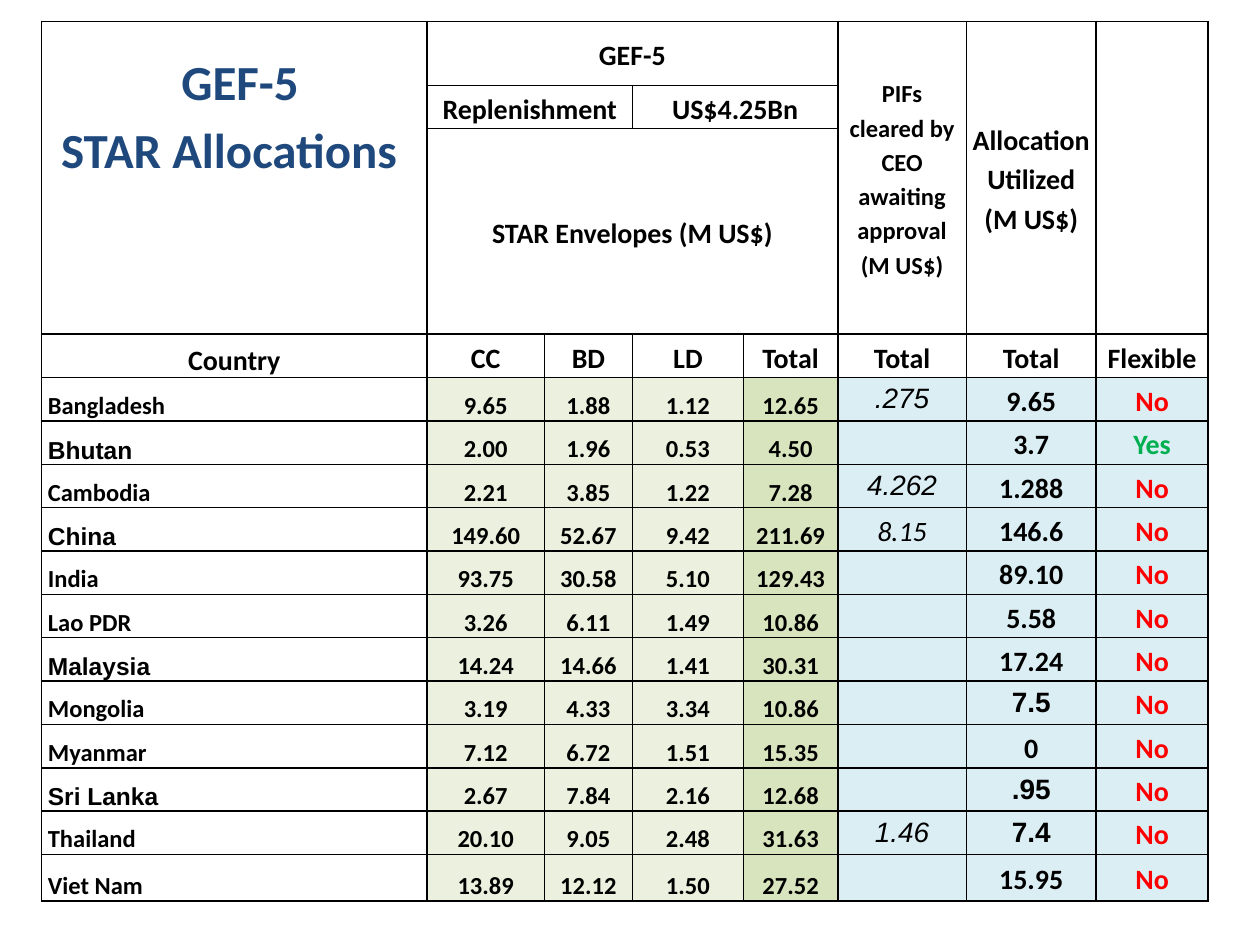
from dataclasses import dataclass, replace
from lxml.etree import SubElement
from pptx import Presentation
from pptx.dml.color import RGBColor as Rgb
from pptx.enum.text import MSO_ANCHOR as Anchor, PP_ALIGN as Align
from pptx.oxml.ns import qn
from pptx.util import Inches, Pt

WHITE, MINT, LIME, SKY = "FFFFFF", "EBF1DE", "D7E4BD", "DBEEF4"
BLACK, RED, GREEN, NAVY = "000000", "FF0000", "00B050", "1F497D"


@dataclass(frozen=True)
class Look:
    size: int = 16
    face: str = "Calibri"
    ink: str = BLACK
    bold: bool = True
    slant: bool = False
    align: Align = Align.CENTER
    anchor: Anchor = Anchor.MIDDLE


@dataclass(frozen=True)
class Head:
    row: int
    col: int
    down: int
    wide: int
    text: str
    look: Look = Look()


@dataclass(frozen=True)
class Land:
    name: str
    star: tuple[str, ...]  # CC, BD, LD, total
    pif: str
    used: str
    flex: str = "No"


COLS = [3.06, 0.93, 0.7, 0.88, 0.75, 1.02, 1.03, 0.89]
FILLS = [WHITE, MINT, MINT, MINT, LIME, SKY, SKY, SKY]
NAMES = ["Country", "CC", "BD", "LD", "Total", "Total", "Total", "Flexible"]
TOP = 4  # header rows

HEADS = [
    Head(0, 0, 3, 1, ""),
    Head(0, 1, 1, 4, "GEF-5"),
    Head(0, 5, 3, 1, "PIFs cleared by CEO awaiting approval (M US$)", Look(14)),
    Head(0, 6, 3, 1, "Allocation Utilized\n(M US$)"),
    Head(0, 7, 3, 1, ""),
    Head(1, 1, 1, 2, "Replenishment"),
    Head(1, 3, 1, 2, "US$4.25Bn"),
    Head(2, 1, 1, 4, "STAR Envelopes (M US$)"),
]

LANDS = [
    Land("Bangladesh", ("9.65", "1.88", "1.12", "12.65"), ".275", "9.65"),
    Land("Bhutan", ("2.00", "1.96", "0.53", "4.50"), "", "3.7", "Yes"),
    Land("Cambodia", ("2.21", "3.85", "1.22", "7.28"), "4.262", "1.288"),
    Land("China", ("149.60", "52.67", "9.42", "211.69"), "8.15", "146.6"),
    Land("India", ("93.75", "30.58", "5.10", "129.43"), "", "89.10"),
    Land("Lao PDR", ("3.26", "6.11", "1.49", "10.86"), "", "5.58"),
    Land("Malaysia", ("14.24", "14.66", "1.41", "30.31"), "", "17.24"),
    Land("Mongolia", ("3.19", "4.33", "3.34", "10.86"), "", "7.5"),
    Land("Myanmar", ("7.12", "6.72", "1.51", "15.35"), "", "0"),
    Land("Sri Lanka", ("2.67", "7.84", "2.16", "12.68"), "", ".95"),
    Land("Thailand", ("20.10", "9.05", "2.48", "31.63"), "1.46", "7.4"),
    Land("Viet Nam", ("13.89", "12.12", "1.50", "27.52"), "", "15.95"),
]
ARIAL = {"Bhutan", "China", "Malaysia", "Sri Lanka",
         ".275", "4.262", "1.46", "7.5", ".95", "7.4"}


def tint(code: str) -> Rgb:
    return Rgb.from_string(code)


def style(frame, look: Look, gap: float) -> None:
    for para in frame.paragraphs:
        para.alignment, para.line_spacing = look.align, gap
        font = para.font
        font.size, font.name = Pt(look.size), look.face
        font.bold, font.italic = look.bold, look.slant
        font.color.rgb = tint(look.ink)


def rule(cell) -> None:
    """Draw a thin black border on all four sides."""
    props = cell._tc.get_or_add_tcPr()
    for side in ("a:lnL", "a:lnR", "a:lnT", "a:lnB"):
        line = SubElement(props, qn(side), w=str(Pt(1)))
        fill = SubElement(line, qn("a:solidFill"))
        SubElement(fill, qn("a:srgbClr"), val=BLACK)


def paint(cell, fill: str) -> None:
    rule(cell)
    cell.fill.solid()
    cell.fill.fore_color.rgb = tint(fill)
    cell.margin_left = cell.margin_right = Inches(0.05)
    cell.margin_top = cell.margin_bottom = 0


def write(cell, text: str, look: Look) -> None:
    cell.text = text
    cell.vertical_anchor = look.anchor
    plain = look.face == "Arial" and look.size == 16
    style(cell.text_frame, look, 1.0 if plain else 1.15)


def draw_land(grid, row: int, land: Land) -> None:
    low = Look(14, anchor=Anchor.BOTTOM)
    looks = [replace(low, align=Align.LEFT)] + [low] * 4 + [
        Look(bold=False, slant=True),
        Look(),
        Look(ink=GREEN if land.flex == "Yes" else RED),
    ]
    texts = [land.name, *land.star, land.pif, land.used, land.flex]
    for col, (text, look) in enumerate(zip(texts, looks)):
        if text in ARIAL:
            look = replace(look, face="Arial")
        write(grid.cell(row, col), text, look)


def draw_table(slide) -> None:
    rows = [0.51, 0.34, 1.63] + [4.13 / 12] * 12 + [0.37]
    grid = slide.shapes.add_table(
        len(rows), len(COLS), Inches(0.33), Inches(0.17),
        Inches(sum(COLS)), Inches(sum(rows))).table
    for col, width in zip(grid.columns, COLS):
        col.width = Inches(width)
    for row, height in enumerate(rows):
        grid.rows[row].height = Inches(height)
        for col, fill in enumerate(FILLS):
            paint(grid.cell(row, col), WHITE if row < TOP else fill)

    # Header block
    for head in HEADS:
        cell = grid.cell(head.row, head.col)
        cell.merge(grid.cell(head.row + head.down - 1, head.col + head.wide - 1))
        write(cell, head.text, head.look)
    for col, name in enumerate(NAMES):
        anchor = Anchor.MIDDLE if col else Anchor.BOTTOM
        write(grid.cell(TOP - 1, col), name, Look(anchor=anchor))

    # Country rows
    for row, land in enumerate(LANDS, TOP):
        draw_land(grid, row, land)


def draw_title(slide) -> None:
    box = slide.shapes.add_textbox(
        Inches(-0.01), Inches(0.5), Inches(3.83), Inches(0.75))
    frame = box.text_frame
    frame.word_wrap = True
    frame.vertical_anchor = Anchor.MIDDLE
    frame.text = "GEF-5\vSTAR Allocations  "
    style(frame, Look(28, ink=NAVY), 1.15)


def main() -> None:
    deck = Presentation()
    deck.slide_width, deck.slide_height = Inches(10), Inches(7.5)
    slide = deck.slides.add_slide(deck.slide_layouts[6])
    draw_table(slide)
    draw_title(slide)
    deck.save("out.pptx")


if __name__ == "__main__":
    main()
